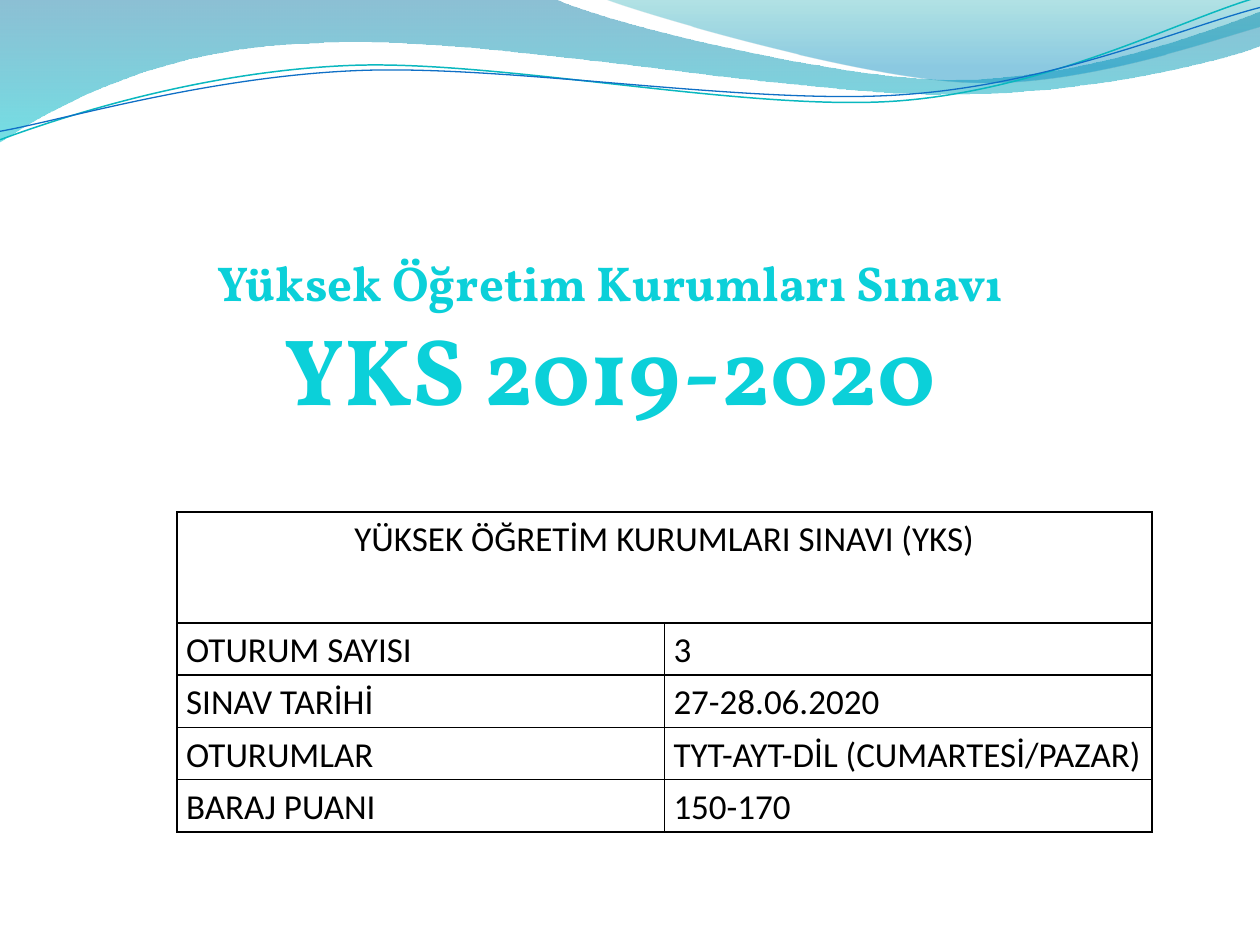
from pptx import Presentation
from pptx.dml.color import RGBColor as RGB
from pptx.enum.text import MSO_AUTO_SIZE as Fit, PP_ALIGN as Align
from pptx.oxml import parse_xml
from pptx.oxml.ns import nsdecls, qn
from pptx.util import Pt


def color(code):
    return RGB.from_string(code)


def write(para, text, style):
    run = para.add_run()
    run.text = text
    for key, val in style.items():
        setattr(run.font, key, val)
    return run


deck = Presentation()
deck.slide_width, deck.slide_height = Pt(720), Pt(540)
slide = deck.slides.add_slide(deck.slide_layouts[6])
shapes = slide.shapes

waves = [
    dict(path=[(0, 0), (316.8, -0.7),
               (342.7, 12.2, 478.1, 45.4, 545.8, 45.4),
               (614.2, 45.4, 689.8, 18.7, 720, 6.5), (720.7, 25.9),
               (707.8, 31.7, 626.4, 54.7, 537.1, 54),
               (447.8, 54, 275, 20.2, 185, 24.5),
               (92.9, 25.9, 33.1, 59.8, -0.7, 81.4), (0, 0)],
         stops=[(0, "0074A1", 45), (1, "00C6CF", 55)]),
    dict(path=[(344.9, -0.7),
               (366.5, 7.9, 491, 44.6, 553.7, 46.8),
               (616.3, 49.7, 691.9, 23, 720, 15.1), (720, 0), (344.9, -0.7)],
         stops=[(0, "00A1A9", 30), (0.8, "008BBF", 45)]),
    dict(path=[(-1.4, 62.9),
               (33.8, 51.7, 114.1, 29.4, 199.8, 29.9),
               (284.8, 30.3, 425.8, 67.3, 512.4, 64.9),
               (599, 62.4, 676.5, 25.7, 720.2, 15.5)],
         line=("0AB8BF", 0.85)),
    dict(path=[(-1.1, 58),
               (32.9, 53.8, 118.3, 32.5, 204.1, 33),
               (290.6, 33.4, 428.9, 63.8, 515.5, 61.4),
               (601.3, 59.6, 678.5, 30.1, 721.4, 21.3)],
         line=("0F6FC6", 0.75)),
]
for wave in waves:
    start, *parts = wave["path"]
    pen = shapes.build_freeform(Pt(start[0]), Pt(start[1]))
    ends = [(Pt(part[-2]), Pt(part[-1])) for part in parts]
    pen.add_line_segments(ends, close="stops" in wave)
    shape = pen.convert_to_shape()
    shape.shadow.inherit = False
    legs = list(shape.element.spPr.iter(qn("a:lnTo")))
    for leg, part in zip(legs, parts):
        if len(part) == 6:
            dots = "".join(
                f'<a:pt x="{Pt(x) - shape.left}" y="{Pt(y) - shape.top}"/>'
                for x, y in zip(part[::2], part[1::2]))
            curve = parse_xml(f'<a:cubicBezTo {nsdecls("a")}>{dots}</a:cubicBezTo>')
            leg.getparent().replace(leg, curve)
    if "stops" in wave:
        shape.line.fill.background()
        shape.fill.gradient()
        shape.fill.gradient_angle = 270
        for stop, (spot, code, _) in zip(shape.fill.gradient_stops, wave["stops"]):
            stop.position = spot
            stop.color.rgb = color(code)
        tints = shape.element.spPr.iter(qn("a:srgbClr"))
        for tint, (_, _, alpha) in zip(tints, wave["stops"]):
            tint.append(parse_xml(f'<a:alpha {nsdecls("a")} val="{alpha * 1000}"/>'))
    else:
        shape.rotation = 357.3
        shape.fill.background()
        code, width = wave["line"]
        shape.line.color.rgb = color(code)
        shape.line.width = Pt(width)

title = shapes.add_textbox(Pt(22.5), Pt(140.7), Pt(652.3), Pt(106.6)).text_frame
title.word_wrap = True
title.auto_size = Fit.SHAPE_TO_FIT_TEXT
lines = [("Yüksek Öğretim Kurumları Sınavı", 28), ("YKS 2019-2020", 54)]
for i, (text, size) in enumerate(lines):
    para = title.add_paragraph() if i else title.paragraphs[0]
    para.alignment = Align.CENTER
    run = write(para, text, dict(name="Vollkorn", size=Pt(size), bold=True))
    run.font.color.rgb = color("0BD0D9")

rows = [
    ["YÜKSEK ÖĞRETİM KURUMLARI SINAVI (YKS)", ""],
    ["OTURUM SAYISI", "3"],
    ["SINAV TARİHİ", "27-28.06.2020"],
    ["OTURUMLAR", "TYT-AYT-DİL (CUMARTESİ/PAZAR)"],
    ["BARAJ PUANI", "150-170"],
]
high, low, wide = 63.4, 29.85, 278.5
table = shapes.add_table(len(rows), 2, Pt(101.2), Pt(292.6), Pt(2 * wide),
                         Pt(high + 4 * low)).table
table.first_row = table.horz_banding = False
for col in table.columns:
    col.width = Pt(wide)
inset = dict(margin_left=Pt(5.2), margin_right=Pt(5.2), margin_top=0, margin_bottom=0)
for r, row in enumerate(rows):
    table.rows[r].height = Pt(low if r else high)
    for c, text in enumerate(row):
        cell = table.cell(r, c)
        for key, val in inset.items():
            setattr(cell, key, val)
        props = cell._tc.get_or_add_tcPr()
        for side in ("lnL", "lnR", "lnT", "lnB"):
            props.append(parse_xml(
                f'<a:{side} {nsdecls("a")} w="{Pt(1)}"><a:solidFill>'
                f'<a:srgbClr val="000000"/></a:solidFill></a:{side}>'))
        cell.fill.background()
        if text:
            para = cell.text_frame.paragraphs[0]
            para.line_spacing = 1.15
            para.alignment = Align.LEFT if r else Align.CENTER
            run = write(para, text, dict(name="Calibri", size=Pt(20)))
            run.font.color.rgb = color("000000")
table.cell(0, 0).merge(table.cell(0, 1))

deck.save("out.pptx")
